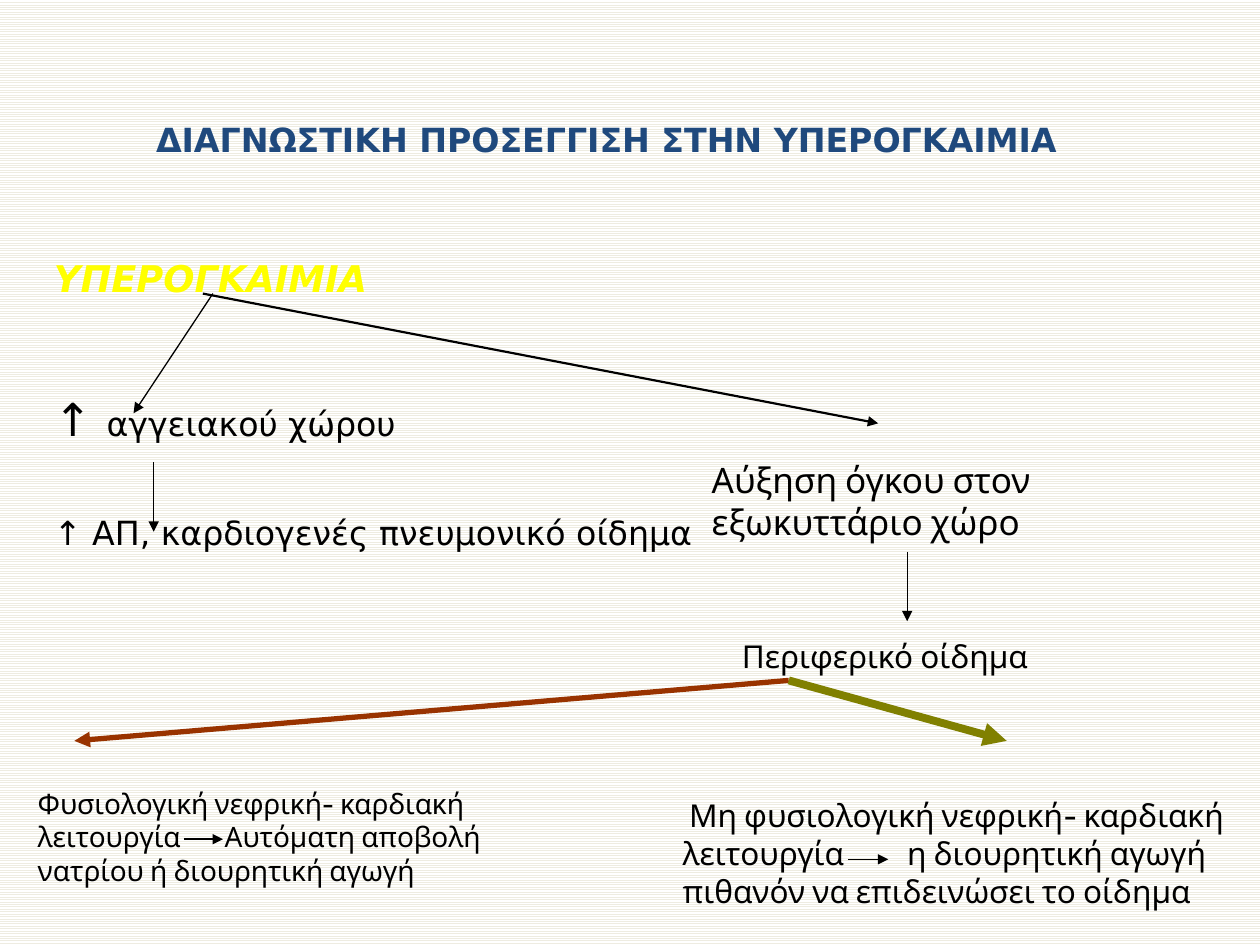
"""Build the slide on the diagnostic approach to hypervolaemia."""
from dataclasses import dataclass

from lxml import etree
from pptx import Presentation
from pptx import util as u
from pptx.dml.color import RGBColor
from pptx.enum import dml, shapes, text
from pptx.oxml.ns import qn


@dataclass(frozen=True)
class Theme:
    heading_font: str = "DejaVu Sans"
    label_font: str = "Cabin"
    navy: str = "1F497D"
    yellow: str = "FFFF00"
    black: str = "000000"
    rust: str = "993300"
    olive: str = "808000"
    stripe: str = "EEECE1"
    paper: str = "FFFFFF"
    title_size: int = 19
    lead_size: int = 21
    symbol_size: int = 26
    branch_size: int = 20
    label_size: int = 18
    note_size: int = 16


theme = Theme()
presentation = Presentation()
presentation.slide_width = u.Inches(10)
presentation.slide_height = u.Inches(7.5)
column = presentation.slide_width / 100
row = presentation.slide_height / 75
slide = presentation.slides.add_slide(presentation.slide_layouts[6])

background = slide.background.fill
background.patterned()
background.pattern = dml.MSO_PATTERN.LIGHT_HORIZONTAL
background.fore_color.rgb = RGBColor.from_string(theme.stripe)
background.back_color.rgb = RGBColor.from_string(theme.paper)


def add_text(left, top, width, height):
    shape = slide.shapes.add_textbox(
        round(left * column), round(top * row), round(width * column), round(height * row))
    shape.text_frame.word_wrap = True
    return shape.text_frame


def style(item, font, size, color, bold=False, italic=False):
    item.font.name = font
    item.font.size = u.Pt(size)
    item.font.color.rgb = RGBColor.from_string(color)
    item.font.bold = bold
    item.font.italic = italic


title = add_text(11.4, 0, 86.4, 13.1)
title.vertical_anchor = text.MSO_ANCHOR.BOTTOM
title.text = "ΔΙΑΓΝΩΣΤΙΚΗ ΠΡΟΣΕΓΓΙΣΗ ΣΤΗΝ ΥΠΕΡΟΓΚΑΙΜΙΑ"
style(title.paragraphs[0].runs[0], theme.heading_font, theme.title_size, theme.navy, bold=True)

vascular = add_text(3.3, 14.6, 94.6, 52.4)
vascular_lines = [
    [("ΥΠΕΡΟΓΚΑΙΜΙΑ", theme.lead_size, theme.yellow, True)],
    [("↑ ", theme.symbol_size, theme.black, False),
     ("αγγειακού χώρου", theme.title_size, theme.black, False)],
    [("↑ ΑΠ, καρδιογενές πνευμονικό οίδημα", theme.title_size, theme.black, False)],
]
for index, parts in enumerate(vascular_lines):
    paragraph = vascular.add_paragraph() if index else vascular.paragraphs[0]
    paragraph.line_spacing = 2.5
    if index:
        paragraph.space_before = u.Pt(0.2 * parts[0][1])
    for words, size, color, strong in parts:
        run = paragraph.add_run()
        run.text = words
        style(run, theme.heading_font, size, color, strong, strong)

labels = [
    (55.5, 35.9, 31.5, 7.7, theme.branch_size, 0, 0,
     ["Αύξηση όγκου στον εξωκυττάριο χώρο"]),
    (57.9, 50.1, 34.6, 4, theme.label_size, 0, 0, ["Περιφερικό οίδημα"]),
    (2, 61.9, 40.2, 9, theme.note_size, 0, 21.5,
     ["Φυσιολογική νεφρική- καρδιακή λειτουργία", " ",
      "Αυτόματη αποβολή νατρίου ή διουρητική αγωγή"]),
    (53.2, 62.7, 46.8, 10, theme.label_size, 0.5, 32,
     ["Μη φυσιολογική νεφρική- καρδιακή λειτουργία", " ",
      "η διουρητική αγωγή πιθανόν να επιδεινώσει το οίδημα"]),
]
for left, top, width, height, size, indent, arrow_gap, parts in labels:
    paragraph = add_text(left, top, width, height).paragraphs[0]
    if indent:
        paragraph._p.get_or_add_pPr().set("indent", str(round(indent * column)))
    for words in parts:
        run = paragraph.add_run()
        run.text = words
        style(run, theme.label_font, size, theme.black)
        if words == " ":
            run._r.get_or_add_rPr().set("spc", str(round(arrow_gap * 100)))

arrows = [
    (16.9, 23.3, 10.6, 32.8, theme.black, 0.75),
    (16.1, 23.3, 69.7, 33.6, theme.black, 1.25),
    (12.2, 36.7, 12.2, 42.2, theme.black, 0.75),
    (72, 43.8, 72, 49.3, theme.black, 0.75),
    (62.6, 54, 5.9, 58.8, theme.rust, 3),
    (14.6, 66.6, 17.7, 66.6, theme.black, 0.75),
    (62.6, 54, 79.9, 58.8, theme.olive, 4.5),
    (67.3, 68.2, 70.5, 68.2, theme.black, 0.75),
]
for start_x, start_y, end_x, end_y, color, weight in arrows:
    arrow = slide.shapes.add_connector(
        shapes.MSO_CONNECTOR.STRAIGHT,
        round(start_x * column), round(start_y * row), round(end_x * column), round(end_y * row))
    arrow.line.color.rgb = RGBColor.from_string(color)
    arrow.line.width = u.Pt(weight)
    etree.SubElement(arrow.line._get_or_add_ln(), qn("a:tailEnd"), type="triangle")
    etree.SubElement(arrow._element.spPr, qn("a:effectLst"))

presentation.save("out.pptx")
